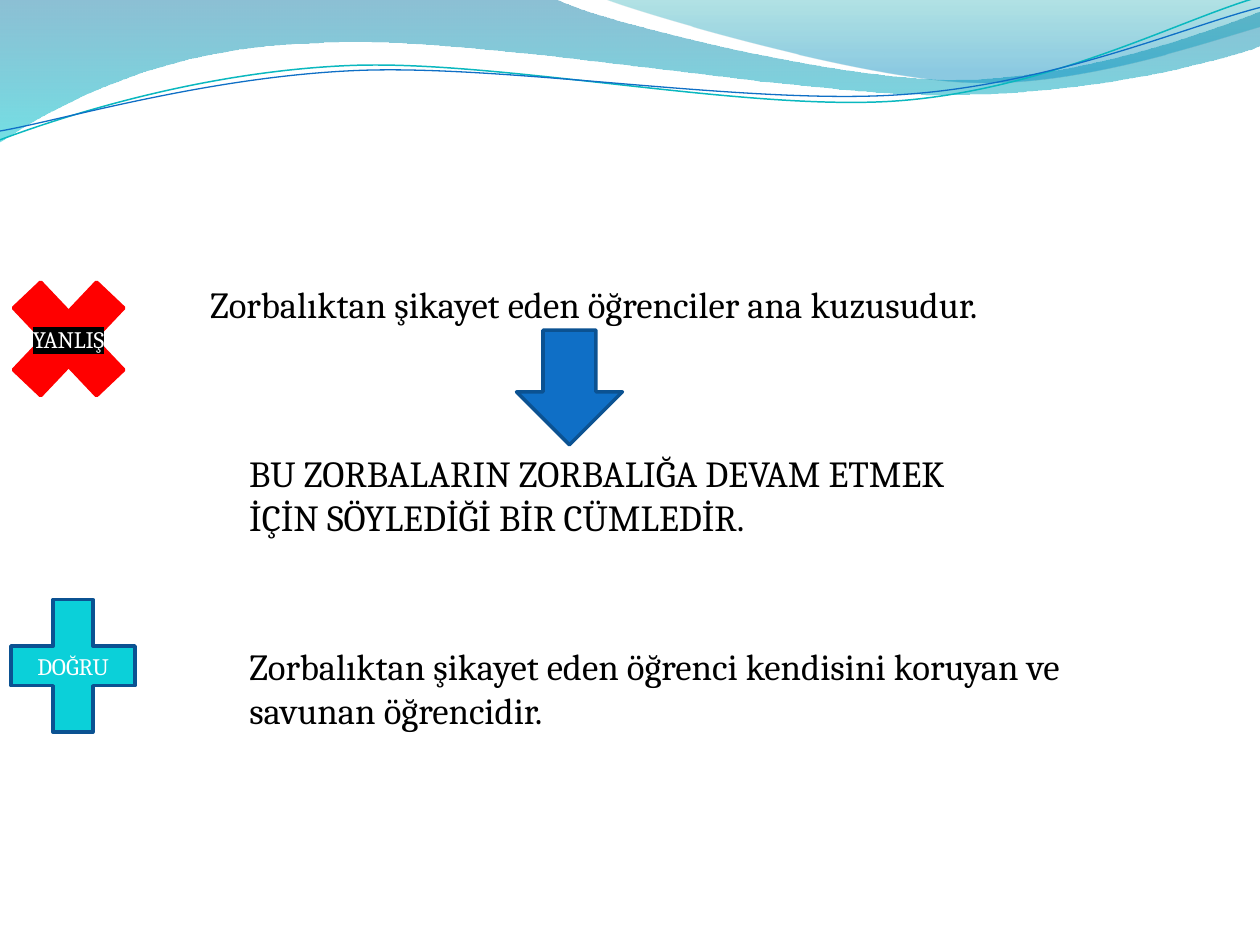
from math import cos, radians, sin

from lxml import etree
from pptx import Presentation
from pptx.dml.color import RGBColor
from pptx.enum.shapes import MSO_SHAPE
from pptx.enum.text import MSO_ANCHOR, MSO_AUTO_SIZE, PP_ALIGN
from pptx.oxml.ns import qn
from pptx.util import Inches, Pt

MULTIPLY, PLUS = MSO_SHAPE.MATH_MULTIPLY, MSO_SHAPE.MATH_PLUS
DOWN_ARROW = MSO_SHAPE.DOWN_ARROW
MIDDLE, CENTER = MSO_ANCHOR.MIDDLE, PP_ALIGN.CENTER
FIT_TEXT = MSO_AUTO_SIZE.SHAPE_TO_FIT_TEXT

BLACK = RGBColor(0x00, 0x00, 0x00)
WHITE = RGBColor(0xFF, 0xFF, 0xFF)
RED = RGBColor(0xFF, 0x00, 0x00)
BLUE = RGBColor(0x0F, 0x6F, 0xC6)
NAVY = RGBColor(0x0B, 0x52, 0x92)
CYAN = RGBColor(0x0B, 0xD0, 0xD9)
TEAL = RGBColor(0x0A, 0xB8, 0xBF)
WAVE_BLUE = RGBColor(0x00, 0x74, 0xA1)
WAVE_AQUA = RGBColor(0x00, 0xC6, 0xCF)
CREST_TEAL = RGBColor(0x00, 0xA1, 0xA9)
CREST_BLUE = RGBColor(0x00, 0x8B, 0xBF)

FONT = "Cambria"
TILT = 357.3

# Outlines in inches: a pair is a straight step, six numbers are a Bezier step
# Gradient stops: position, colour, opacity in percent
WAVES = [
    {"outline": [(0, 0), (4.4, -0.01),
                 (4.76, 0.17, 6.64, 0.63, 7.58, 0.63),
                 (8.53, 0.63, 9.58, 0.26, 10, 0.09), (10.01, 0.36),
                 (9.83, 0.44, 8.7, 0.76, 7.46, 0.75),
                 (6.22, 0.75, 3.82, 0.28, 2.57, 0.34),
                 (1.29, 0.36, 0.46, 0.83, -0.01, 1.13), (0, 0)],
     "stops": [(0, WAVE_BLUE, 45), (1, WAVE_AQUA, 55)]},
    {"outline": [(4.79, -0.01),
                 (5.09, 0.11, 6.82, 0.62, 7.69, 0.65),
                 (8.56, 0.69, 9.61, 0.32, 10, 0.21), (10, 0), (4.79, -0.01)],
     "stops": [(0, CREST_TEAL, 30), (0.8, CREST_BLUE, 45)]},
    {"outline": [(0, 1.11), (0.48, 0.93, 1.58, 0.57, 2.77, 0.52),
                 (3.95, 0.47, 5.93, 0.89, 7.13, 0.8),
                 (8.33, 0.71, 9.38, 0.15, 9.98, -0.02)],
     "line": (TEAL, 0.85), "pivot": (4.99, 0.58)},
    {"outline": [(0, 1.04), (0.47, 0.96, 1.64, 0.61, 2.83, 0.56),
                 (4.03, 0.51, 5.97, 0.84, 7.17, 0.75),
                 (8.36, 0.67, 9.41, 0.21, 10, 0.06)],
     "line": (BLUE, 0.75), "pivot": (5, 0.59)},
]

INDENT = 1.88
SENTENCE_HEIGHT = 0.81

# Sentences: text, left, top, width
CLAIM = ("Zorbalıktan şikayet eden öğrenciler ana kuzusudur.", 1.57, 2.19, 6.31)
TRUTH = ("Zorbalıktan şikayet eden öğrenci kendisini koruyan ve savunan öğrencidir.",
         INDENT, 5.06, 6.79)
REASON = ("BU ZORBALARIN ZORBALIĞA DEVAM ETMEK İÇİN SÖYLEDİĞİ BİR CÜMLEDİR.",
          INDENT, 3.53, 6.24)

# Symbols: preset, place, fill, line, label, label highlight
WRONG = (MULTIPLY, (-0.09, 2.02, 1.27, 1.34), RED, RED, "YANLIŞ", BLACK)
RIGHT = (PLUS, (-0.09, 4.57, 1.34, 1.43), CYAN, NAVY, "DOĞRU", None)
ARROW = (DOWN_ARROW, (4.1, 2.62, 0.84, 0.91), BLUE, NAVY, None, None)


def turn_back(point, pivot):
    """Undo the tilt of a point around the pivot."""
    angle = radians(360 - TILT)
    dx, dy = point[0] - pivot[0], point[1] - pivot[1]
    return (pivot[0] + dx * cos(angle) - dy * sin(angle),
            pivot[1] + dx * sin(angle) + dy * cos(angle))


def set_line(shape, color, width):
    shape.line.color.rgb = color
    shape.line.width = Pt(width)


def draw_outline(page, outline, closed, pivot):
    points = [step[i:i + 2] for step in outline for i in range(0, len(step), 2)]
    if pivot:
        points = [turn_back(point, pivot) for point in points]
    points = [(Inches(x), Inches(y)) for x, y in points]
    builder = page.shapes.build_freeform(*points[0])
    builder.add_line_segments(points[1:], close=closed)
    wave = builder.convert_to_shape()
    # Join the three points of each Bezier step into one curve
    segments = iter(list(wave._element.iter(qn("a:lnTo"))))
    for step in outline[1:]:
        segment = next(segments)
        if len(step) == 6:
            segment.addprevious(curve := etree.Element(qn("a:cubicBezTo")))
            for part in (segment, next(segments), next(segments)):
                curve.append(part[0])
                part.getparent().remove(part)
    if pivot:
        wave.rotation = TILT
    return wave


def add_wave(page, outline, stops=None, line=None, pivot=None):
    wave = draw_outline(page, outline, bool(stops), pivot)
    wave.shadow.inherit = False
    if line:
        wave.fill.background()
        set_line(wave, *line)
        return
    wave.line.fill.background()
    wave.fill.gradient()
    wave.fill.gradient_angle = 270
    for stop, (position, color, _) in zip(wave.fill.gradient_stops, stops):
        stop.position = position
        stop.color.rgb = color
    colors = wave._element.spPr.iter(qn("a:srgbClr"))
    for node, (_, _, opacity) in zip(colors, stops):
        etree.SubElement(node, qn("a:alpha"), val=str(opacity * 1000))


def write(shape, text, size, color):
    para = shape.text_frame.paragraphs[0]
    span = para.add_run()
    span.text = text
    for name, value in {"name": FONT, "size": Pt(size)}.items():
        setattr(span.font, name, value)
    span.font.color.rgb = color
    return para, span


def add_highlight(span, color):
    solid = span.font._element.find(qn("a:solidFill"))
    mark = etree.Element(qn("a:highlight"))
    etree.SubElement(mark, qn("a:srgbClr"), val=str(color))
    solid.addnext(mark)


def add_symbol(page, preset, place, fill, line, label, highlight):
    symbol = page.shapes.add_shape(preset, *map(Inches, place))
    symbol.shadow.inherit = False
    symbol.fill.solid()
    symbol.fill.fore_color.rgb = fill
    set_line(symbol, line, 2)
    if label:
        symbol.text_frame.vertical_anchor = MIDDLE
        para, span = write(symbol, label, 13.5, WHITE)
        para.alignment = CENTER
        if highlight is not None:
            add_highlight(span, highlight)


def add_sentence(page, text, left, top, width):
    box = page.shapes.add_textbox(*map(Inches, (left, top, width, SENTENCE_HEIGHT)))
    for name, value in {"word_wrap": True, "auto_size": FIT_TEXT}.items():
        setattr(box.text_frame, name, value)
    write(box, text, 21, BLACK)


def main():
    deck = Presentation()
    deck.slide_width, deck.slide_height = Inches(10), Inches(7.5)
    page = deck.slides.add_slide(deck.slide_layouts[6])
    # Wave banner
    for wave in WAVES:
        add_wave(page, **wave)
    # Claim and truth with their symbols, then the reason below the arrow
    add_sentence(page, *CLAIM)
    for symbol in (WRONG, RIGHT):
        add_symbol(page, *symbol)
    add_sentence(page, *TRUTH)
    add_symbol(page, *ARROW)
    add_sentence(page, *REASON)
    deck.save("out.pptx")


if __name__ == "__main__":
    main()
